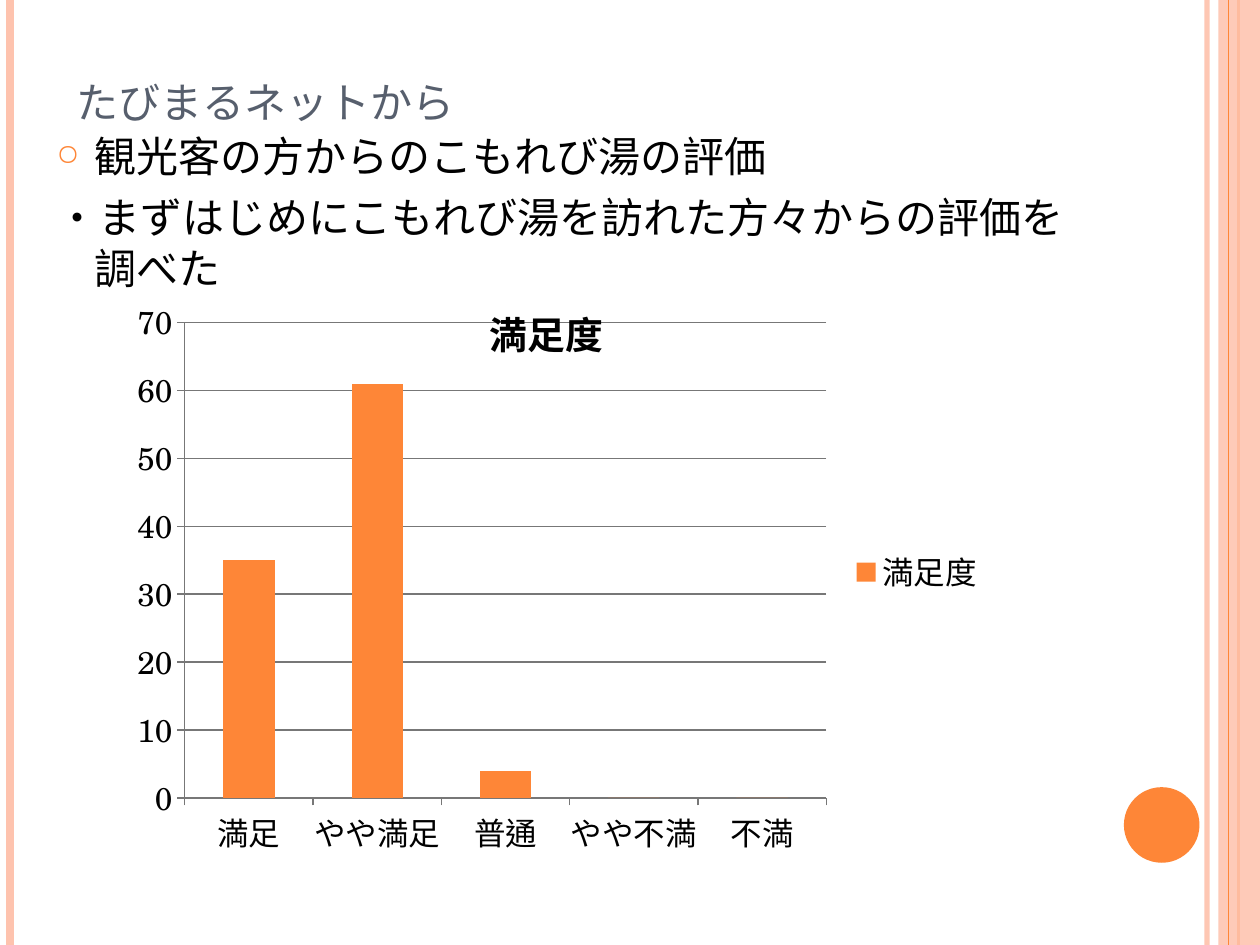
"""Build a slide with a satisfaction column chart for a hot spring."""
from lxml import etree
from pptx import Presentation
from pptx.chart.data import CategoryChartData
from pptx.dml.color import RGBColor
from pptx.enum.chart import XL_CHART_TYPE, XL_LEGEND_POSITION, XL_TICK_MARK
from pptx.enum.shapes import MSO_CONNECTOR, MSO_SHAPE
from pptx.enum.text import MSO_ANCHOR
from pptx.oxml.ns import qn
from pptx.util import Inches, Pt

STRAIGHT = MSO_CONNECTOR.STRAIGHT
RECTANGLE, OVAL = MSO_SHAPE.RECTANGLE, MSO_SHAPE.OVAL
TOP, BOTTOM = MSO_ANCHOR.TOP, MSO_ANCHOR.BOTTOM
COLUMNS = XL_CHART_TYPE.COLUMN_CLUSTERED
RIGHT = XL_LEGEND_POSITION.RIGHT
OUTSIDE = XL_TICK_MARK.OUTSIDE

WIDTH, HEIGHT = Inches(10), Inches(7.5)
COLORS = {"pale": "FEC3AE", "orange": "FE8637", "slate": "575F6D",
          "text": "000000", "grid": "777777"}
SANS, SERIF = "Noto Sans CJK JP", "TeX Gyre Schola"
PLOT = {"x": 0.1, "y": 0.08, "w": 0.71, "h": 0.8}


class Page:
    """Hold the style and the current slide; lengths are shares of its size."""

    def __init__(self, deck):
        self.shapes = deck.slides.add_slide(deck.slide_layouts[6]).shapes

    def color(self, name):
        return RGBColor.from_string(COLORS[name])

    def frame(self, left, top, width, height):
        return (int(left * WIDTH), int(top * HEIGHT),
                int(width * WIDTH), int(height * HEIGHT))

    def fade(self, shape, percent):
        for tint in shape._element.spPr.iter(qn("a:srgbClr")):
            etree.SubElement(tint, qn("a:alpha"), val=str(percent * 1000))

    def style(self, font, name, color="text", **values):
        for key, value in {"name": name, **values}.items():
            setattr(font, key, value)
        font.color.rgb = self.color(color)
        latin = font._rPr.find(qn("a:latin"))
        asian = etree.Element(qn("a:ea"), typeface=name)
        latin.addnext(asian)

    def stripe(self, x, color, points, opacity=100):
        line = self.shapes.add_connector(
            STRAIGHT, int(x * WIDTH), 0, int(x * WIDTH), HEIGHT)
        line.line.color.rgb = self.color(color)
        line.line.width = Pt(points)
        self.fade(line, opacity)
        etree.SubElement(line._element.spPr, qn("a:effectLst"))

    def shape(self, kind, frame, color, opacity=100):
        shape = self.shapes.add_shape(kind, *self.frame(*frame))
        shape.shadow.inherit = False
        shape.fill.solid()
        shape.fill.fore_color.rgb = self.color(color)
        shape.line.fill.background()
        self.fade(shape, opacity)

    def text(self, frame, anchor=TOP):
        box = self.shapes.add_textbox(*self.frame(*frame)).text_frame
        box.word_wrap = True
        box.vertical_anchor = anchor
        return box

    def title(self, frame, words):
        span = self.text(frame, BOTTOM).paragraphs[0].add_run()
        span.text = words
        self.style(span.font, SANS, "slate", size=Pt(30))
        span._r.get_or_add_rPr().set("cap", "small")

    def body(self, frame, lines):
        box = self.text(frame)
        for index, (words, bullet) in enumerate(lines):
            para = box.add_paragraph() if index else box.paragraphs[0]
            para.space_before = Pt(6)
            span = para.add_run()
            span.text = words
            self.style(span.font, SERIF, size=Pt(24))
            self.hang(para, bullet)

    def hang(self, para, bullet):
        props = para._p.get_or_add_pPr()
        props.set("marL", str(Inches(0.3)))
        props.set("indent", str(-Inches(0.3)))
        if not bullet:
            etree.SubElement(props, qn("a:buNone"))
            return
        tint = etree.SubElement(props, qn("a:buClr"))
        etree.SubElement(tint, qn("a:srgbClr"), val=COLORS["orange"])
        etree.SubElement(props, qn("a:buSzPct"), val="70000")
        etree.SubElement(props, qn("a:buChar"), char=bullet)

    def chart(self, frame, name, scores):
        data = CategoryChartData()
        data.categories = list(scores)
        data.add_series(name, list(scores.values()))
        chart = self.shapes.add_chart(COLUMNS, *self.frame(*frame), data).chart
        self.style(chart.font, SERIF, size=Pt(18))
        chart.has_title = True
        heading = chart.chart_title.text_frame.paragraphs[0].add_run()
        heading.text = name
        self.style(heading.font, SERIF, size=Pt(21.6), bold=True)
        chart.chart_title._element.find(qn("c:overlay")).set("val", "1")
        chart.has_legend = True
        chart.legend.position = RIGHT
        chart.legend.include_in_layout = False
        plot = chart.plots[0]
        plot.gap_width = 150
        plot.vary_by_categories = False
        fill = plot.series[0].format.fill
        fill.solid()
        fill.fore_color.rgb = self.color("orange")
        chart.value_axis.has_major_gridlines = True
        chart.value_axis.minimum_scale = 0
        chart.value_axis.maximum_scale = 70
        chart.value_axis.major_unit = 10
        for axis in (chart.category_axis, chart.value_axis):
            axis.major_tick_mark = OUTSIDE
        for part in (chart.category_axis, chart.value_axis,
                     chart.value_axis.major_gridlines):
            part.format.line.color.rgb = self.color("grid")
            part.format.line.width = Pt(0.75)
        self.place_plot(chart)

    def place_plot(self, chart):
        area = chart._chartSpace.chart.plotArea
        for old in area.findall(qn("c:layout")):
            area.remove(old)
        layout = etree.Element(qn("c:layout"))
        area.insert(0, layout)
        manual = etree.SubElement(layout, qn("c:manualLayout"))
        values = {"layoutTarget": "inner", "xMode": "edge", "yMode": "edge", **PLOT}
        for tag, value in values.items():
            etree.SubElement(manual, qn(f"c:{tag}"), val=str(value))


def main():
    deck = Presentation()
    deck.slide_width, deck.slide_height = WIDTH, HEIGHT
    page = Page(deck)
    page.stripe(0.958, "pale", 3, 93)
    page.stripe(0.008, "pale", 4.5)
    page.stripe(0.983, "orange", 1.5)
    page.shape(RECTANGLE, (0.967, 0, 0.033, 1), "pale", 87)
    page.stripe(0.975, "orange", 0.75)
    page.shape(OVAL, (0.892, 0.833, 0.06, 0.08), "orange")
    page.title((0.051, 0.04, 0.816, 0.103), "たびまるネットから")
    page.body((0.035, 0.132, 0.85, 0.829), [
        ("観光客の方からのこもれび湯の評価", "○"),
        ("・まずはじめにこもれび湯を訪れた方々からの評価を調べた", None),
    ])
    page.chart((0.075, 0.291, 0.717, 0.629), "満足度", {
        "満足": 35, "やや満足": 61, "普通": 4, "やや不満": 0, "不満": 0})
    deck.save("out.pptx")


if __name__ == "__main__":
    main()
